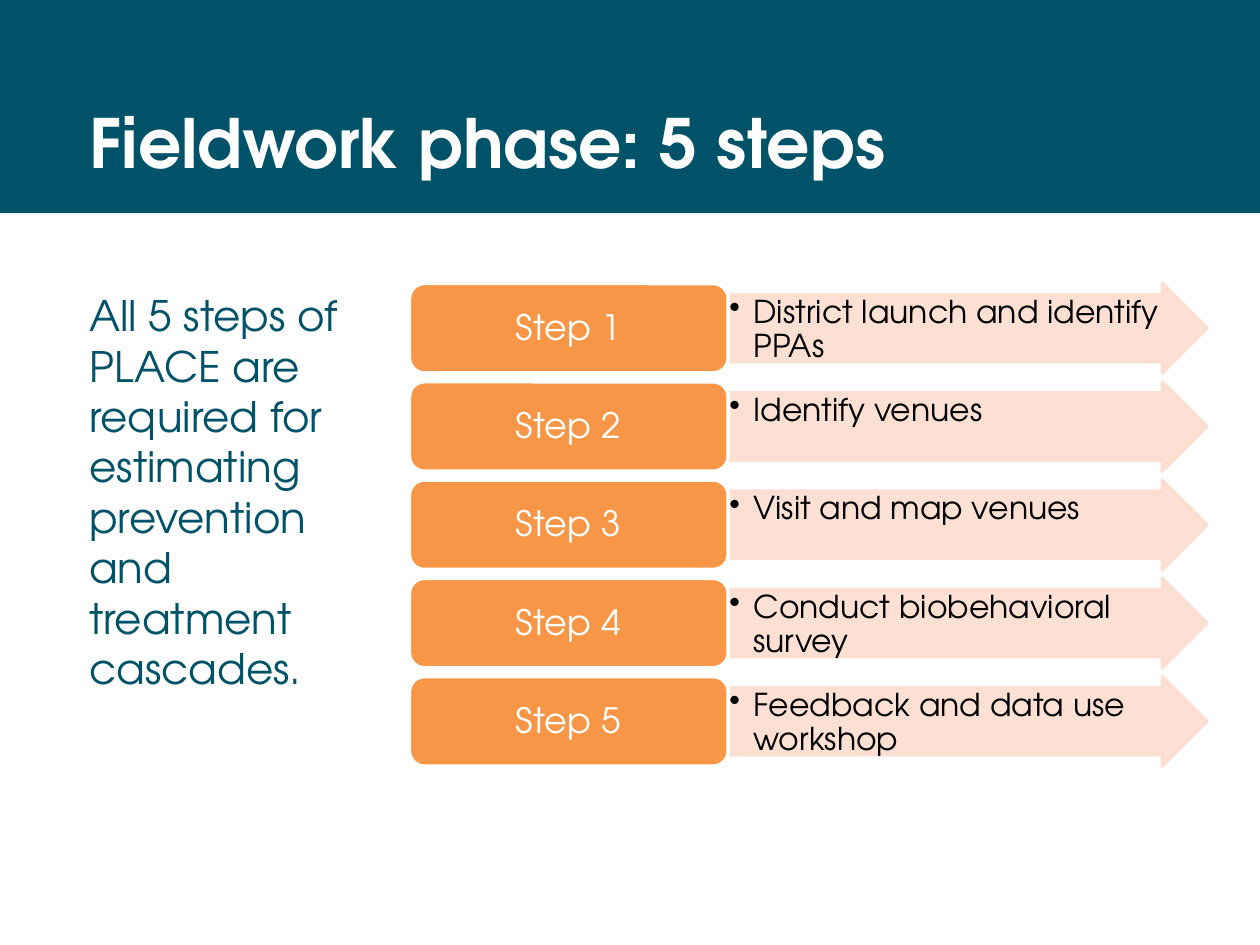
from lxml import etree
from pptx import Presentation
from pptx.dml.color import RGBColor
from pptx.enum import shapes, text
from pptx.oxml import ns
from pptx.util import Inches, Pt

FONT = "TeX Gyre Adventor"
TEAL, ORANGE, PEACH, WHITE, BLACK = "005268", "F79646", "FCDDCF", "FFFFFF", "000000"
STEPS = [
    "District launch and identify PPAs",
    "Identify venues",
    "Visit and map venues",
    "Conduct biobehavioral survey",
    "Feedback and data use workshop",
]
FIRST_TOP, STEP_PITCH, STEP_HEIGHT = 2.25, 0.78, 0.71
LABEL_LEFT, LABEL_WIDTH = 3.25, 2.53
ARROW_LEFT, ARROW_WIDTH = LABEL_LEFT + LABEL_WIDTH, 3.8


def color(hex_value):
    return RGBColor.from_string(hex_value)


def add_shape(page, kind, left, top, width, height, fill, line=None, opacity=None):
    shape = page.shapes.add_shape(
        kind, Inches(left), Inches(top), Inches(width), Inches(height))
    shape.shadow.inherit = False
    shape.fill.solid()
    shape.fill.fore_color.rgb = color(fill)
    if line:
        shape.line.color.rgb = color(line)
        shape.line.width = Pt(2)
    else:
        shape.line.fill.background()
    if opacity:
        for tint in shape._element.spPr.iter(ns.qn("a:srgbClr")):
            etree.SubElement(tint, ns.qn("a:alpha"), val=str(opacity * 1000))
    return shape


def add_text(page, words, left, top, width, height, size, ink, bold=False,
             align=text.PP_ALIGN.LEFT, anchor=text.MSO_ANCHOR.TOP,
             insets=(0.1, 0.05), spacing=None, bullet=False):
    box = page.shapes.add_textbox(
        Inches(left), Inches(top), Inches(width), Inches(height))
    frame = box.text_frame
    frame.word_wrap = True
    frame.vertical_anchor = anchor
    frame.margin_left = frame.margin_right = Inches(insets[0])
    frame.margin_top = frame.margin_bottom = Inches(insets[1])
    para = frame.paragraphs[0]
    para.alignment = align
    if spacing:
        para.line_spacing = spacing
    if bullet:
        add_bullet(para, 0.19)
    span = para.add_run()
    span.text = words
    span.font.name = FONT
    span.font.size = Pt(size)
    span.font.bold = bold
    span.font.color.rgb = color(ink)
    return box


def add_bullet(para, indent):
    para.level = 1
    props = para._p.get_or_add_pPr()
    props.set("marL", str(Inches(indent)))
    props.set("indent", str(-Inches(indent)))
    etree.SubElement(props, ns.qn("a:buChar"), char="•")


def add_step(page, number, task):
    top = FIRST_TOP + (number - 1) * STEP_PITCH
    # Arrow with the task
    arrow = add_shape(page, shapes.MSO_SHAPE.RIGHT_ARROW, ARROW_LEFT, top,
                      ARROW_WIDTH, STEP_HEIGHT, PEACH, line=PEACH, opacity=90)
    arrow.adjustments[0] = 0.75
    arrow.adjustments[1] = 0.5
    add_text(page, task, ARROW_LEFT, top + 0.09, 3.53, 0.53, 18, BLACK,
             insets=(0.01, 0.01), spacing=0.9, bullet=True)
    # Rounded label with the step number
    add_shape(page, shapes.MSO_SHAPE.ROUNDED_RECTANGLE, LABEL_LEFT, top,
              LABEL_WIDTH, STEP_HEIGHT, ORANGE, line=WHITE)
    add_text(page, f"Step {number}", LABEL_LEFT + 0.03, top + 0.04, 2.46, 0.64,
             20, WHITE, align=text.PP_ALIGN.CENTER,
             anchor=text.MSO_ANCHOR.MIDDLE, insets=(0.08, 0.04), spacing=0.9)


def main():
    deck = Presentation()
    deck.slide_width, deck.slide_height = Inches(10), Inches(7.5)
    page = deck.slides.add_slide(deck.slide_layouts[6])

    # Title band
    add_shape(page, shapes.MSO_SHAPE.RECTANGLE, 0, 0, 10, 1.69, TEAL)
    add_text(page, "Fieldwork phase: 5 steps", 0.61, 0.75, 8.62, 1.1,
             38.8, WHITE, bold=True)

    # Five steps
    for number, task in enumerate(STEPS, start=1):
        add_step(page, number, task)

    # Side note
    add_text(page, "All 5 steps of PLACE are required for estimating prevention "
             "and treatment cascades.", 0.61, 2.25, 2.42, 3.33, 24, TEAL)

    deck.save("out.pptx")


if __name__ == "__main__":
    main()
